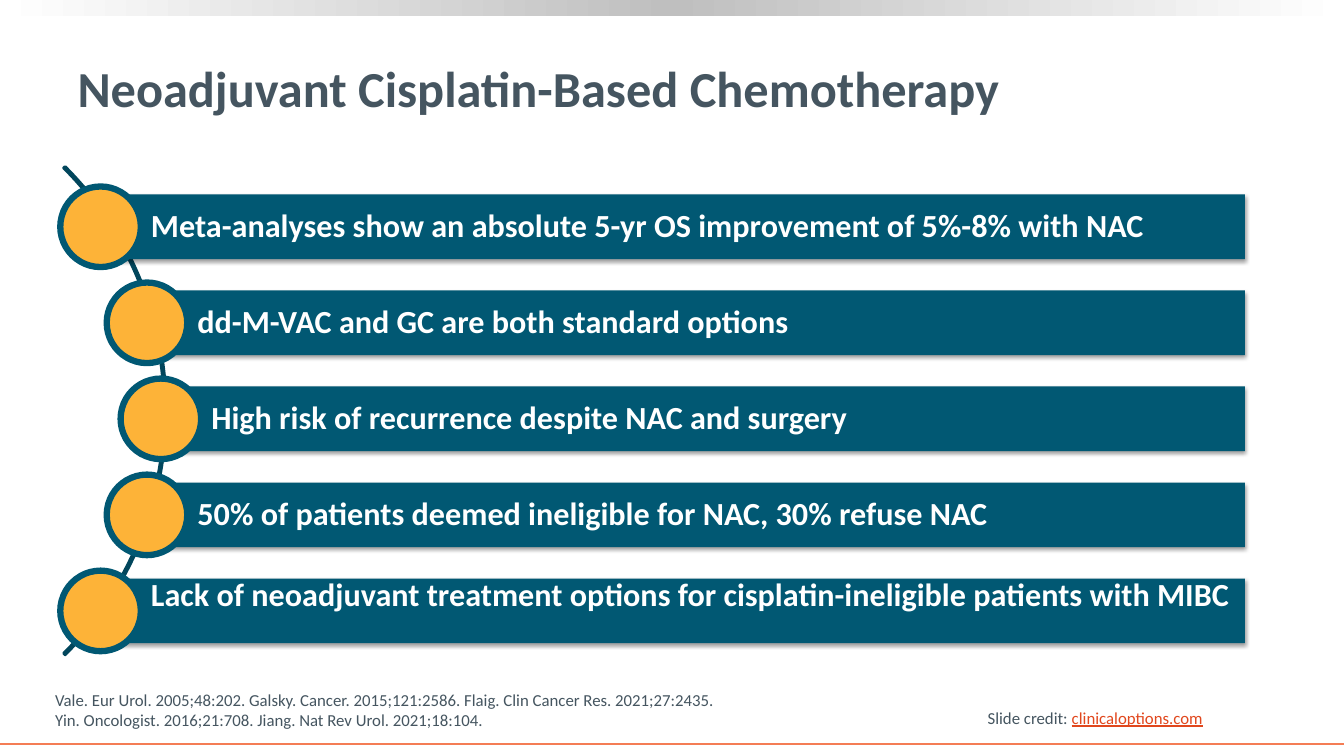
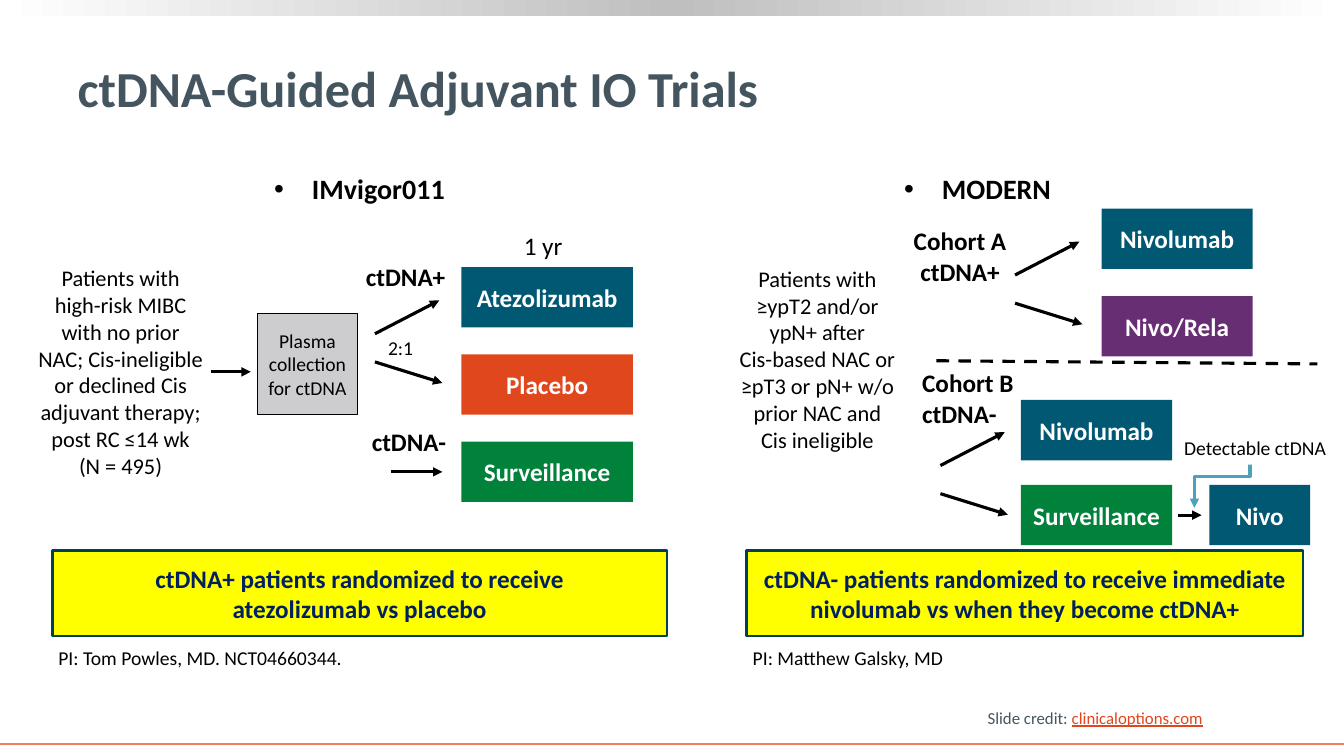
import lxml.etree
import pptx
import pptx.dml.color
import pptx.enum.dml
import pptx.enum.shapes
import pptx.enum.text
import pptx.oxml.ns
import pptx.util

Cm = pptx.util.Cm
Pt = pptx.util.Pt
qn = pptx.oxml.ns.qn
SubElement = lxml.etree.SubElement
SHAPE = pptx.enum.shapes.MSO_SHAPE
CONNECTOR = pptx.enum.shapes.MSO_CONNECTOR
ANCHOR = pptx.enum.text.MSO_ANCHOR
ALIGN = pptx.enum.text.PP_ALIGN

FONT = "Calibri"
SLIDE_WIDTH, SLIDE_HEIGHT = 33.87, 19.05
TEAL, ORANGE, GREEN, PURPLE = "015873", "E1471D", "00823B", "682E74"
SLATE, BLACK, WHITE, AMBER = "455560", "000000", "FFFFFF", "FDB338"
ARM_HEIGHT, ARM_PITCH = 1.52, 2.2


def rgb(color):
    """Turn a hex string into a colour."""
    return pptx.dml.color.RGBColor.from_string(color)


def set_font(font, size, color, bold=False):
    """Set family, size, colour and weight of a font."""
    font.name, font.size, font.bold = FONT, Pt(size), bold
    font.color.rgb = rgb(color)


def write(shape, text, size, color=BLACK, bold=False, align=ALIGN.LEFT,
          anchor=ANCHOR.TOP, wrap=True):
    """Fill a shape with uniformly formatted paragraphs."""
    frame = shape.text_frame
    frame.text = text
    frame.word_wrap = wrap
    frame.vertical_anchor = anchor
    frame.auto_size = pptx.enum.text.MSO_AUTO_SIZE.NONE
    for paragraph in frame.paragraphs:
        paragraph.alignment = align
        set_font(paragraph.font, size, color, bold)
    return frame


def place(shape, left, top, width, height):
    """Move and size a shape in centimetres."""
    shape.left, shape.top = Cm(left), Cm(top)
    shape.width, shape.height = Cm(width), Cm(height)


def add_box(slide, left, top, width, height, fill, line=None, weight=1, kind=SHAPE.RECTANGLE):
    """Add a flat preset shape."""
    shape = slide.shapes.add_shape(kind, Cm(left), Cm(top), Cm(width), Cm(height))
    shape.shadow.inherit = False
    if fill:
        shape.fill.solid()
        shape.fill.fore_color.rgb = rgb(fill)
    else:
        shape.fill.background()
    if line:
        shape.line.color.rgb = rgb(line)
        shape.line.width = Pt(weight)
    else:
        shape.line.fill.background()
    return shape


def add_text(slide, left, top, width, height, text, size, **style):
    """Add a text box."""
    shape = slide.shapes.add_textbox(Cm(left), Cm(top), Cm(width), Cm(height))
    write(shape, text, size, **style)
    return shape


def add_line(slide, start, end, color=BLACK, weight=2.25, arrow=True, kind=CONNECTOR.STRAIGHT):
    """Add a connector, with an arrowhead unless told otherwise."""
    connector = slide.shapes.add_connector(kind, *(Cm(value) for value in (*start, *end)))
    connector.line.color.rgb = rgb(color)
    connector.line.width = Pt(weight)
    properties = connector.element.spPr
    if arrow:
        SubElement(properties.find(qn("a:ln")), qn("a:tailEnd"), type="triangle")
    SubElement(properties, qn("a:effectLst"))
    return connector


def add_frame(slide, title):
    """Add the title, top band, bottom rule and credit shared by all slides."""
    band = add_box(slide, 0, 0, SLIDE_WIDTH, 0.41, WHITE)
    band.fill.gradient()
    band.fill.gradient_angle = 0
    stops = band.element.find(".//" + qn("a:gsLst"))
    stops.clear()
    for position, color in ((0, WHITE), (50000, "BFBFBF"), (100000, WHITE)):
        stop = SubElement(stops, qn("a:gs"), pos=str(position))
        SubElement(stop, qn("a:srgbClr"), val=color)
    add_line(slide, (0, 18.75), (SLIDE_WIDTH, 18.75), "F47D55", 1.5, arrow=False)
    credit = add_text(slide, 24.64, 17.7, 5.99, 0.76, "Slide credit: ", 12,
                      color=SLATE, wrap=False)
    address = credit.text_frame.paragraphs[0].add_run()
    address.text = "clinicaloptions.com"
    address.font.color.rgb = rgb(ORANGE)
    address.font.underline = True
    place(slide.shapes.title, 1.7, 0.66, 30.2, 3.07)
    write(slide.shapes.title, title, 36, SLATE, True, anchor=ANCHOR.MIDDLE)


def add_bar_shadow(bar):
    """Give a bar a soft shadow below."""
    effects = bar.element.spPr.find(qn("a:effectLst"))
    shadow = SubElement(effects, qn("a:outerShdw"), blurRad=str(Pt(3.1)), dist=str(Pt(1.6)),
                        dir="5400000", rotWithShape="0")
    color = SubElement(shadow, qn("a:srgbClr"), val=BLACK)
    SubElement(color, qn("a:alpha"), val="38000")


def add_curved_list(slide, left, top, width, rows):
    """Add bars with round markers that follow an arc."""
    pitch, marker, bar_height = 2.42, 2.03, 1.63
    arc = add_box(slide, left - 14.73, top - 3.05, 17.4, 17.4, None, "01465C", 2,
                  SHAPE.BLOCK_ARC)
    for index, value in enumerate((189, 27, 0.003)):
        arc.adjustments[index] = value
    for index, (indent, text, anchor) in enumerate(rows):
        row_top = top + index * pitch
        bar_indent = indent + marker / 2
        bar = add_box(slide, left + bar_indent, row_top + (marker - bar_height) / 2,
                      width - bar_indent, bar_height, TEAL)
        add_bar_shadow(bar)
        frame = write(bar, text, 23, WHITE, True, anchor=anchor)
        frame.margin_left, frame.margin_right = Cm(1.27), Cm(0.15)
        frame.margin_top = frame.margin_bottom = Cm(0 if anchor == ANCHOR.TOP else 0.15)
        frame.paragraphs[0].line_spacing = 0.9
        add_box(slide, left + indent, row_top, marker, marker, AMBER, TEAL, 4.5, SHAPE.OVAL)


def add_heading(placeholder, left, top, width, text):
    """Turn a body placeholder into a centred trial heading."""
    place(placeholder, left, top, width, 13)
    paragraph = placeholder.text_frame.paragraphs[0]
    properties = paragraph._p.get_or_add_pPr()
    properties.set("marL", "0")
    properties.set("indent", "0")
    SubElement(properties, qn("a:buNone"))
    write(placeholder, text, 20, bold=True, align=ALIGN.CENTER)
    paragraph.line_spacing = 0.9
    paragraph.space_before = Pt(0)


def add_arm(slide, left, top, width, text, fill):
    """Add a treatment arm."""
    arm = add_box(slide, left, top, width, ARM_HEIGHT, fill)
    write(arm, text, 18, WHITE, True, ALIGN.CENTER, ANCHOR.MIDDLE, wrap=False)


def add_fork(slide, left, top):
    """Add the two arrows of a randomization."""
    add_line(slide, (left, top), (left + 1.62, top - 0.84))
    add_line(slide, (left, top + 0.71), (left + 1.7, top + 1.24))


def add_conclusion(slide, left, top, width, text, investigator):
    """Add the yellow conclusion box and the investigator below it."""
    box = add_box(slide, left, top, width, 2.16, "FFFF00", "014155", 2)
    write(box, text, 18, "002060", True, ALIGN.CENTER, ANCHOR.MIDDLE)
    add_text(slide, left - 0.1, top + 2.27, 7.7, 0.86, investigator, 14)


def add_imvigor_trial(slide, left, top):
    """Draw the IMvigor011 design."""
    add_heading(slide.placeholders[1], left + 1.08, top, 14.76, "IMvigor011")
    add_text(slide, left + 0.09, top + 2.33, 4.7, 5.74,
             "Patients with high-risk MIBC with no prior NAC; Cis-ineligible or declined Cis "
             "adjuvant therapy; post RC ≤14 wk\n(N = 495)", 16, align=ALIGN.CENTER)
    plasma = add_box(slide, left + 5.88, top + 3.7, 2.54, 2.54, "CDCDCF", BLACK, 0.5)
    write(plasma, "Plasma collection for ctDNA", 14, align=ALIGN.CENTER, anchor=ANCHOR.MIDDLE)
    plasma.text_frame.margin_left = plasma.text_frame.margin_right = Cm(0.2)
    arms = (("Atezolizumab", TEAL), ("Placebo", ORANGE), ("Surveillance", GREEN))
    for index, (name, fill) in enumerate(arms):
        add_arm(slide, left + 11.03, top + 2.53 + index * ARM_PITCH, 4.32, name, fill)
    add_fork(slide, left + 8.85, top + 4.21)
    add_line(slide, (left + 4.71, top + 5.17), (left + 5.72, top + 5.17))
    add_line(slide, (left + 9.26, top + 7.69), (left + 10.55, top + 7.69))
    labels = ((8.93, 4.13, 1.14, "2:1", 14, False), (8.37, 2.25, 2.54, "ctDNA+", 18, True),
              (8.52, 6.42, 2.41, "ctDNA-", 18, True), (12.35, 1.49, 1.5, "1 yr", 18, False))
    for x, y, width, text, size, bold in labels:
        add_text(slide, left + x, top + y, width, 1.02, text, size, bold=bold, wrap=False)
    add_conclusion(slide, left + 0.72, top + 9.67, 15.49,
                   "ctDNA+ patients randomized to receive\vatezolizumab vs placebo",
                   "PI: Tom Powles, MD. NCT04660344.")


def add_modern_trial(slide, left, top):
    """Draw the MODERN design."""
    add_heading(slide.placeholders[2], left - 0.03, top, 14.53, "MODERN")
    add_text(slide, left + 0.89, top + 2.35, 4.62, 5.05,
             "Patients with ≥ypT2 and/or ypN+ after\vCis-based NAC or\v≥pT3 or pN+ w/o "
             "prior NAC and\vCis ineligible", 16, align=ALIGN.CENTER)
    arms = ((10.36, 1.06, 3.81, "Nivolumab", TEAL),
            (10.36, 1.06 + ARM_PITCH, 3.81, "Nivo/Rela", PURPLE),
            (8.33, 5.88, 3.81, "Nivolumab", TEAL),
            (8.33, 8.02, 3.81, "Surveillance", GREEN),
            (13.08, 8.02, 2.54, "Nivo", TEAL))
    for x, y, width, name, fill in arms:
        add_arm(slide, left + x, top + y, width, name, fill)
    add_fork(slide, left + 8.18, top + 2.73)
    add_fork(slide, left + 6.3, top + 7.53)
    add_line(slide, (left + 12.29, top + 8.78), (left + 12.88, top + 8.78))
    add_text(slide, left + 5.36, top + 1.36, 2.87, 1.8, "Cohort A\vctDNA+", 18,
             bold=True, align=ALIGN.CENTER, wrap=False)
    add_text(slide, left + 5.59, top + 4.94, 2.84, 1.8, "Cohort B\vctDNA-", 18,
             bold=True, wrap=False)
    divider = add_line(slide, (left + 6.2, top + 4.89), (left + 15.8, top + 4.97), arrow=False)
    divider.line.dash_style = pptx.enum.dml.MSO_LINE.DASH
    elbow = add_line(slide, (left + 12.6, top + 7.1), (left + 14.2, top + 8.5), "4DA1BB",
                     kind=CONNECTOR.ELBOW)
    elbow.element.spPr.find(qn("a:xfrm")).set("rot", "5400000")
    detectable = add_box(slide, left + 12.19, top + 6.65, 4.14, 0.86, WHITE)
    write(detectable, "Detectable ctDNA", 14, wrap=False)
    add_conclusion(slide, left + 1.42, top + 9.67, 14.02,
                   "ctDNA- patients randomized to receive immediate nivolumab vs when they "
                   "become ctDNA+", "PI: Matthew Galsky, MD")


def build_chemotherapy_slide(presentation):
    """Build the slide on neoadjuvant chemotherapy."""
    slide = presentation.slides.add_slide(presentation.slide_layouts[5])
    add_frame(slide, "Neoadjuvant Cisplatin-Based Chemotherapy")
    rows = (
        (0, "Meta-analyses show an absolute 5-yr OS improvement of 5%-8% with NAC", ANCHOR.MIDDLE),
        (1.17, "dd-M-VAC and GC are both standard options", ANCHOR.MIDDLE),
        (1.52, "High risk of recurrence despite NAC and surgery", ANCHOR.MIDDLE),
        (1.17, "50% of patients deemed ineligible for NAC, 30% refuse NAC", ANCHOR.MIDDLE),
        (0, "Lack of neoadjuvant treatment options for cisplatin-ineligible patients with MIBC",
         ANCHOR.TOP),
    )
    add_curved_list(slide, 1.52, 4.7, 29.85, rows)
    add_text(slide, 1.14, 17.25, 21.82, 1.27,
             "Vale. Eur Urol. 2005;48:202. Galsky. Cancer. 2015;121:2586. Flaig. Clin Cancer "
             "Res. 2021;27:2435.\vYin. Oncologist. 2016;21:708. Jiang. Nat Rev Urol. "
             "2021;18:104.", 12, color=SLATE, anchor=ANCHOR.BOTTOM)


def build_trials_slide(presentation):
    """Build the slide on ctDNA-guided trials."""
    slide = presentation.slides.add_slide(presentation.slide_layouts[3])
    add_frame(slide, "ctDNA-Guided Adjuvant IO Trials")
    add_imvigor_trial(slide, 0.6, 4.2)
    add_modern_trial(slide, 17.4, 4.2)


def main():
    """Build and save the presentation."""
    presentation = pptx.Presentation()
    presentation.slide_width = Cm(SLIDE_WIDTH)
    presentation.slide_height = Cm(SLIDE_HEIGHT)
    build_chemotherapy_slide(presentation)
    build_trials_slide(presentation)
    presentation.save("out.pptx")


if __name__ == "__main__":
    main()
